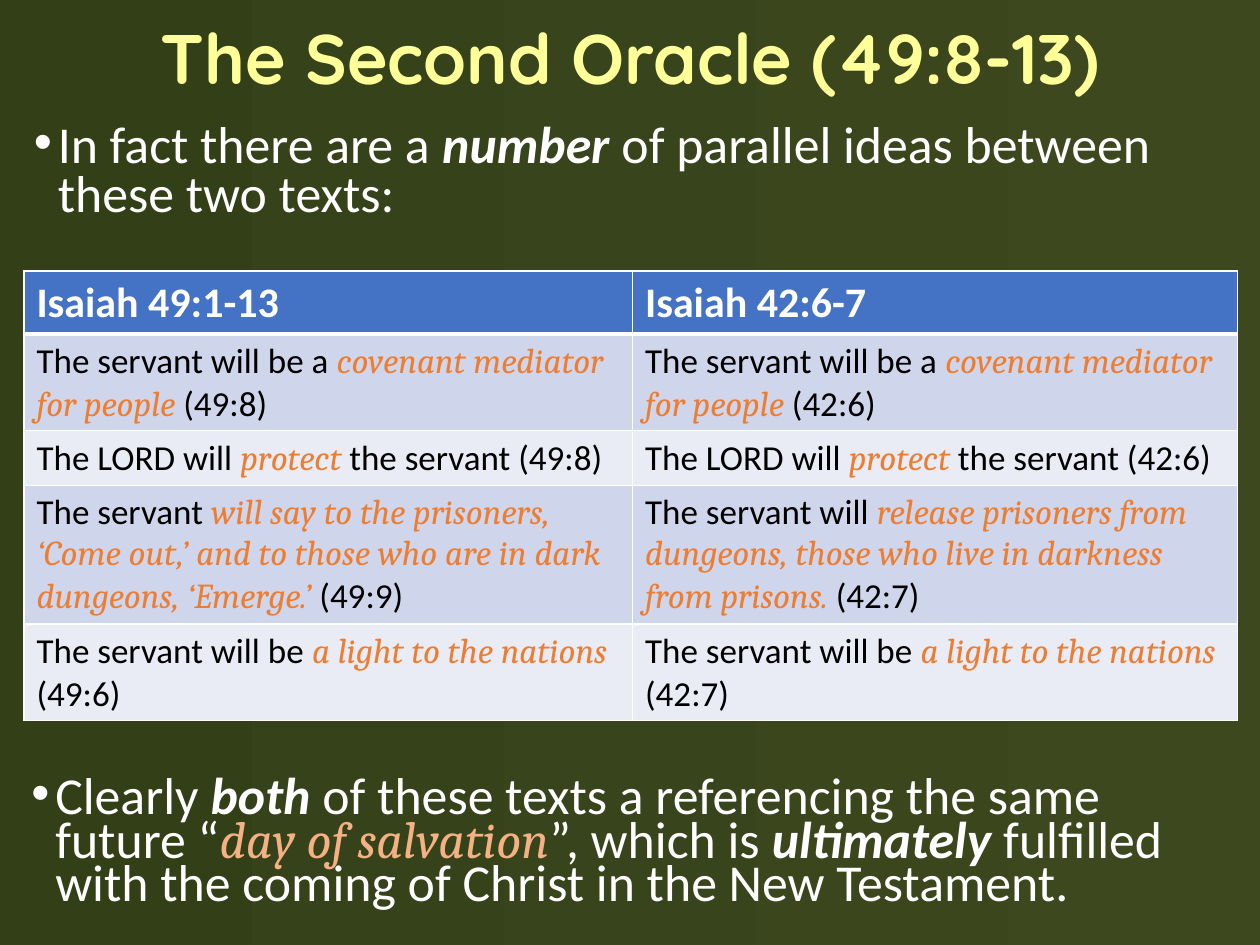
from lxml import etree
from pptx import Presentation
from pptx import util as u
from pptx.dml.color import RGBColor
from pptx.enum import text as t
from pptx.oxml.ns import qn

HUES = {
    "right": "3D481F", "left": "334017", "title": "FFFF99", "white": "FFFFFF",
    "black": "000000", "head": "4472C4", "dark": "CFD5EA", "light": "E9EBF5",
    "quote": "ED7D31", "peach": "F4B183",
}


def rgb(name):
    return RGBColor.from_string(HUES[name])


class Deck:
    """Holds the text style and the current slide."""
    font, quote = "Calibri", "Cambria"

    def __init__(self, wide, high):
        self.prs = Presentation()
        self.prs.slide_width, self.prs.slide_height = u.Inches(wide), u.Inches(high)
        self.slide = self.prs.slides.add_slide(self.prs.slide_layouts[6])

    def back(self, first, last):
        fill = self.slide.background.fill
        fill.gradient()
        fill.gradient_angle = 180
        for stop, name, pos in zip(fill.gradient_stops, (first, last), (0, 1)):
            stop.color.rgb, stop.position = rgb(name), pos

    def runs(self, para, parts, size, hue, font=None):
        """A part is plain text, or (text, "strong"), or (text, quote hue)."""
        para.font.size, para.font.name = u.Pt(size), font or self.font
        para.font.color.rgb = rgb(hue)
        for part in parts:
            words, kind = (part, None) if isinstance(part, str) else part
            run = para.add_run()
            run.text = words
            if kind:
                run.font.italic = True
            if kind == "strong":
                run.font.bold = True
            elif kind:
                run.font.name, run.font.color.rgb = self.quote, rgb(kind)

    def box(self, place, gap):
        frame = self.slide.shapes.add_textbox(*map(u.Inches, place)).text_frame
        frame.word_wrap = True
        para = frame.paragraphs[0]
        para.line_spacing = gap
        return frame, para

    def title(self, place, words):
        frame, para = self.box(place, 0.9)
        frame.vertical_anchor = t.MSO_ANCHOR.MIDDLE
        para.alignment = t.PP_ALIGN.CENTER
        self.runs(para, [words], 40, "title", "Quicksand")
        para.font.bold = True

    def bullet(self, place, gap, parts):
        para = self.box(place, gap)[1]
        props = para._p.get_or_add_pPr()
        props.set("marL", str(u.Inches(0.19)))
        props.set("indent", str(-u.Inches(0.19)))
        etree.SubElement(props, qn("a:buFont")).set("typeface", "Arial")
        etree.SubElement(props, qn("a:buChar")).set("char", "•")
        self.runs(para, parts, 29.6, "white")

    def edges(self, cell, base):
        props = cell._tc.get_or_add_tcPr()
        for i, (side, wide) in enumerate(zip("LRTB", (1, 1, 1, base))):
            line = etree.Element(qn(f"a:ln{side}"), w=str(u.Pt(wide)))
            fill = etree.SubElement(line, qn("a:solidFill"))
            etree.SubElement(fill, qn("a:srgbClr")).set("val", HUES["white"])
            props.insert(i, line)

    def table(self, place, cols, high, heads, rows):
        shape = self.slide.shapes.add_table(
            len(rows) + 1, len(cols), *map(u.Inches, place))
        grid = shape.table
        for col, wide in zip(grid.columns, cols):
            col.width = u.Inches(wide)
        for r, row in enumerate([[[h] for h in heads]] + rows):
            grid.rows[r].height = u.Inches(high)
            for c, parts in enumerate(row):
                cell = grid.cell(r, c)
                para = cell.text_frame.paragraphs[0]
                cell.fill.solid()
                if r == 0:
                    shade = "head"
                    self.runs(para, parts, 24, "white")
                    para.font.bold = True
                else:
                    shade = "dark" if r % 2 else "light"
                    self.runs(para, parts, 20, "black")
                cell.fill.fore_color.rgb = rgb(shade)
                # The rule below the heads is thick and shared with row 1
                self.edges(cell, 1 if r else 3)
                if r == 1:
                    cell._tc.tcPr.find(qn("a:lnT")).set("w", str(u.Pt(3)))
        shape.height = u.Inches(place[3])


def pair(lead, quote, ends):
    """The same idea in both texts, with its own verse in each."""
    return [[lead, (quote, "quote"), end] for end in ends]


def main():
    deck = Deck(10, 7.5)
    deck.back("right", "left")

    # Title and opening point
    deck.title((0, 0, 10, 0.98), "The Second Oracle (49:8-13)")
    deck.bullet((0.17, 0.93, 9.65, 0.92), 0.8, [
        "In fact there are a ", ("number", "strong"),
        " of parallel ideas between these two texts:"])

    # Parallel ideas
    rows = [
        pair("The servant will be a ", "covenant mediator for people ",
             ("(49:8)", "(42:6)")),
        pair("The LORD will ", "protect ",
             ("the servant (49:8)", "the servant (42:6)")),
        [["The servant ",
          ("will say to the prisoners, ‘Come out,’ and to those who are in "
           "dark dungeons, ‘Emerge.’ ", "quote"), "(49:9)"],
         ["The servant will ",
          ("release prisoners from dungeons, those who live in darkness "
           "from prisons. ", "quote"), "(42:7)"]],
        pair("The servant will be ", "a light to the nations ",
             ("(49:6)", "(42:7)")),
    ]
    deck.table((0.19, 2.15, 9.63, 3.57), (4.83, 4.8), 0.41,
               ("Isaiah 49:1-13", "Isaiah 42:6-7"), rows)

    # Closing point
    deck.bullet((0.15, 6.14, 9.65, 1.24), 0.7, [
        "Clearly ", ("both", "strong"),
        " of these texts a referencing the same future “",
        ("day of salvation", "peach"), "”, which is ",
        ("ultimately", "strong"),
        " fulfilled with the coming of Christ in the New Testament."])

    deck.prs.save("out.pptx")


if __name__ == "__main__":
    main()
